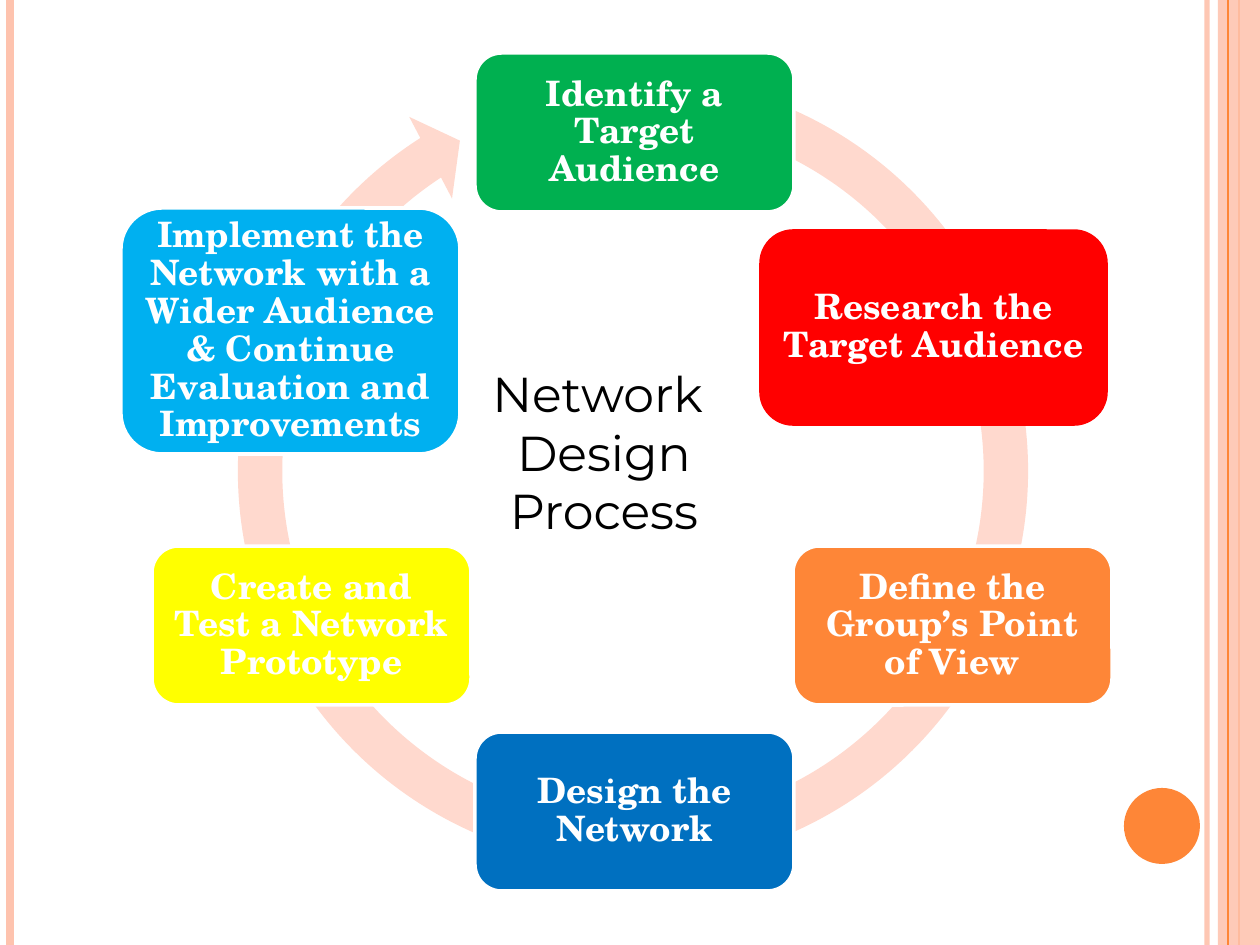
from lxml.etree import SubElement
from pptx import Presentation
from pptx.dml.color import RGBColor
from pptx.enum.shapes import MSO_CONNECTOR as Connector, MSO_SHAPE as Shape
from pptx.enum.text import MSO_ANCHOR as Anchor, PP_ALIGN as Align
from pptx.oxml.ns import qn
from pptx.util import Emu, Pt

SLIDE_W, SLIDE_H = 1260, 945
EMU_PER_PX = 914400 / 126
COLORS = {
    "white": "FFFFFF", "black": "000000", "peach": "FEC3AE", "ring": "FFD9CE",
    "orange": "FE8637", "green": "00B050", "red": "FF0000", "blue": "0070C0",
    "yellow": "FFFF00", "sky": "00B0F0",
}
STEP_FONT, TITLE_FONT = "TeX Gyre Schola", "Montserrat"
STEP_SIZE = (319, 159)
MIDDLE_X, LEFT_X, RIGHT_X = 475, 152, 793
TOP_Y, LOWER_Y, BOTTOM_Y = 53, 546, 732
STEPS = [
    ("Identify a Target Audience", "green", "white", (MIDDLE_X, TOP_Y, *STEP_SIZE)),
    ("Research the Target Audience", "red", "red", (761, 231, 345, 193)),
    ("Define the Group’s Point of View", "orange", "white", (RIGHT_X, LOWER_Y, *STEP_SIZE)),
    ("Design the Network", "blue", "white", (MIDDLE_X, BOTTOM_Y, *STEP_SIZE)),
    ("Create and Test a Network Prototype", "yellow", "white", (LEFT_X, LOWER_Y, *STEP_SIZE)),
    ("Implement the Network with a Wider Audience & Continue Evaluation and Improvements",
     "sky", "white", (121, 208, 339, 246)),
]


def px(length):
    """Turn pixels into EMU."""
    return Emu(round(length * EMU_PER_PX))


def rgb(name):
    """Look up a named colour."""
    return RGBColor.from_string(COLORS[name])


def set_alpha(element, percent):
    """Make the first colour inside an element partly transparent."""
    color = next(element.iter(qn("a:srgbClr")))
    SubElement(color, qn("a:alpha"), val=str(percent * 1000))


def add_stripe(slide, x, color, weight, alpha=None):
    """Draw a vertical line over the full slide height."""
    stripe = slide.shapes.add_connector(Connector.STRAIGHT, px(x), px(0), px(x), px(SLIDE_H))
    stripe.line.color.rgb = rgb(color)
    stripe.line.width = Pt(weight)
    properties = stripe.element.spPr
    if alpha:
        set_alpha(properties, alpha)
    SubElement(properties, qn("a:effectLst"))


def add_filled(slide, kind, box, color):
    """Add a flat preset shape without an outline."""
    shape = slide.shapes.add_shape(kind, *map(px, box))
    shape.shadow.inherit = False
    shape.fill.solid()
    shape.fill.fore_color.rgb = rgb(color)
    shape.line.fill.background()
    return shape


def style_text(paragraph, font, size, color, bold=False):
    """Centre a paragraph and format its runs."""
    paragraph.alignment = Align.CENTER
    for run in paragraph.runs:
        run.font.name = font
        run.font.size = Pt(size)
        run.font.bold = bold
        run.font.color.rgb = rgb(color)


def add_frame(slide):
    """Draw the stripes and the disc along the slide edges."""
    add_stripe(slide, 1207, "peach", 3, 93)
    add_stripe(slide, 10, "peach", 4.5)
    add_stripe(slide, 1239, "orange", 1.5)
    band = add_filled(slide, Shape.RECTANGLE, (1218, 0, 42, SLIDE_H), "peach")
    set_alpha(band.element.spPr, 87)
    add_stripe(slide, 1228, "orange", 0.75)
    add_filled(slide, Shape.OVAL, (1124, 788, 76, 76), "orange")


def add_cycle_arrow(slide):
    """Draw the circular arrow behind the steps."""
    ring = add_filled(slide, Shape.CIRCULAR_ARROW, (214, 52, 838, 838), "ring")
    for index, value in enumerate((0.053, 3.126, 142.284, 171.269, 0.055)):
        ring.adjustments[index] = value


def add_step(slide, label, color, outline, box):
    """Add one rounded step with its label."""
    step = add_filled(slide, Shape.ROUNDED_RECTANGLE, box, color)
    step.line.color.rgb = rgb(outline)
    step.line.width = Pt(2)
    frame = step.text_frame
    frame.text = label
    frame.word_wrap = True
    frame.vertical_anchor = Anchor.MIDDLE
    frame.margin_left = frame.margin_right = px(10)
    frame.margin_top = frame.margin_bottom = px(10)
    paragraph = frame.paragraphs[0]
    paragraph.line_spacing = 0.9
    style_text(paragraph, STEP_FONT, 20, "white", bold=True)


def add_title(slide):
    """Write the title in the middle of the cycle."""
    title = slide.shapes.add_textbox(*map(px, (462, 357, 284, 190)))
    frame = title.text_frame
    frame.word_wrap = True
    frame.text = "Network \nDesign\nProcess"
    for paragraph in frame.paragraphs:
        style_text(paragraph, TITLE_FONT, 28, "black")


def main():
    """Build and save the slide."""
    deck = Presentation()
    deck.slide_width, deck.slide_height = px(SLIDE_W), px(SLIDE_H)
    slide = deck.slides.add_slide(deck.slide_layouts[6])
    add_frame(slide)
    add_cycle_arrow(slide)
    for step in STEPS:
        add_step(slide, *step)
    add_title(slide)
    deck.save("out.pptx")


if __name__ == "__main__":
    main()
